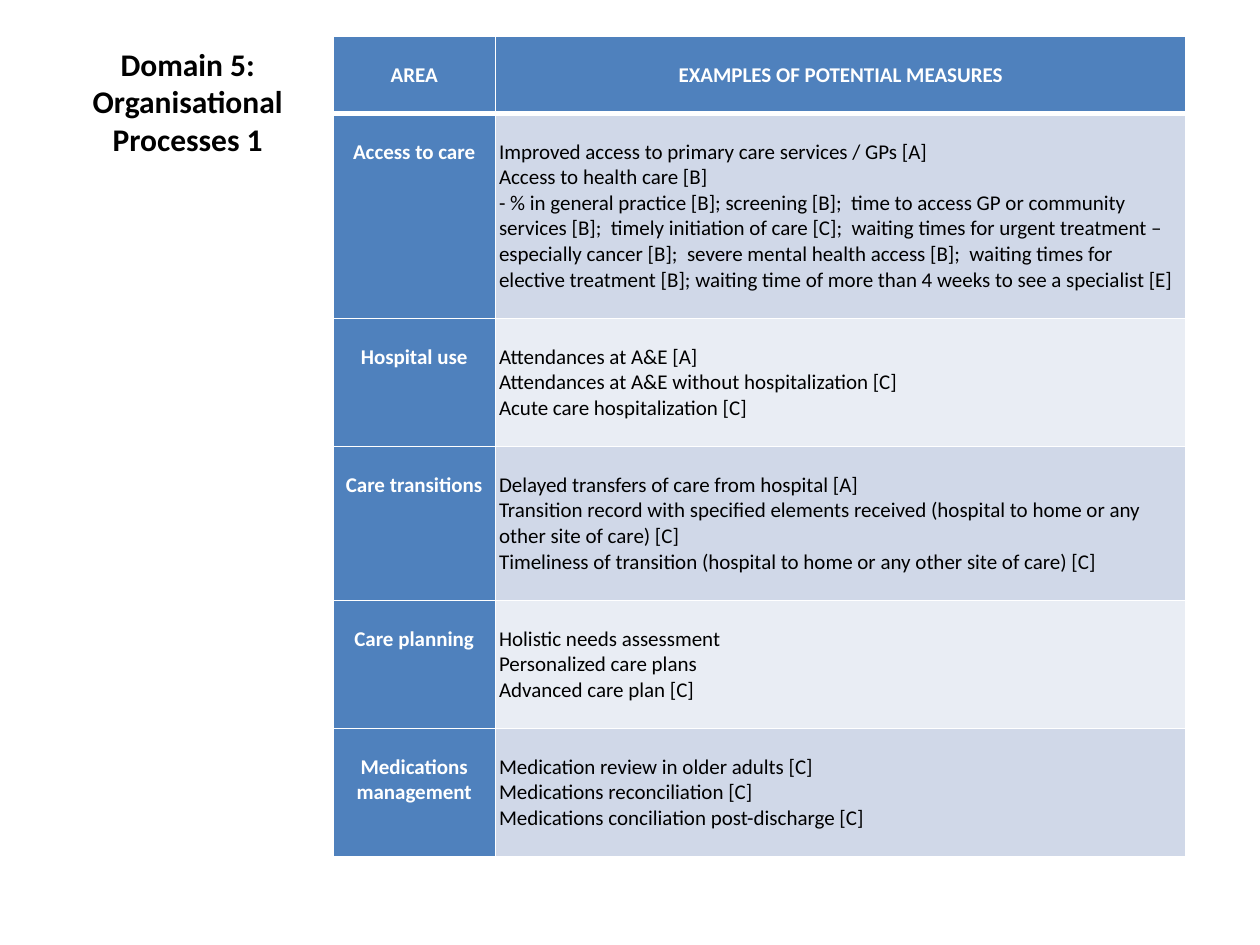
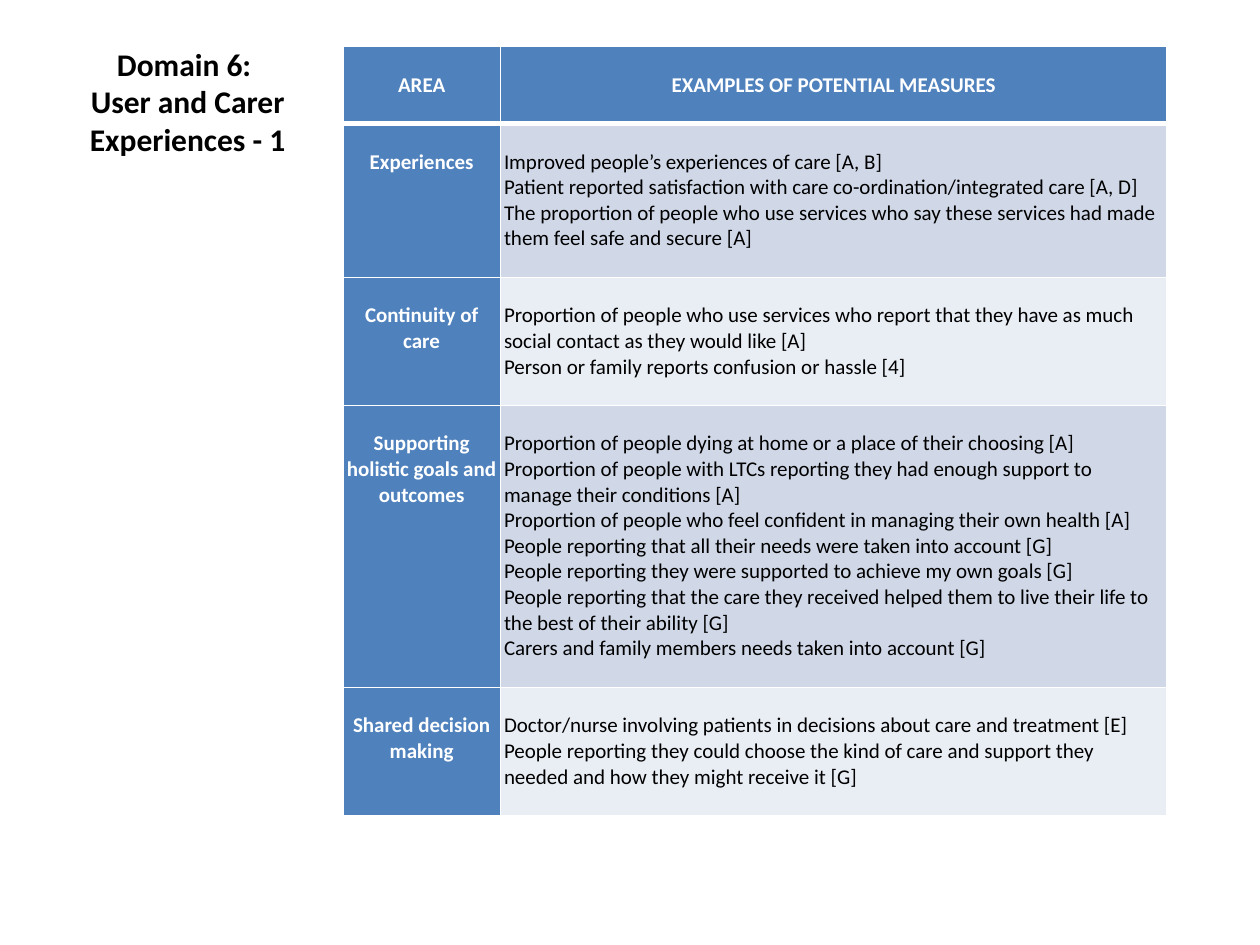
import pptx
import pptx.util
import pptx.dml.color
import pptx.enum.text
import pptx.oxml.ns
import lxml.etree
from dataclasses import dataclass
from pptx.util import Cm


@dataclass(frozen=True)
class Theme:
    font: str = "Calibri"
    title_size: int = 18
    table_size: int = 12
    ink: str = "000000"
    paper: str = "FFFFFF"
    accent: str = "4F81BD"
    bands: tuple = ("D0D8E8", "E9EDF4")
    thin: int = 1
    thick: int = 3


THEME = Theme()
HEADINGS = ("AREA", "EXAMPLES OF POTENTIAL MEASURES")

SLIDES = [
    {
        "title": "Domain 5: Organisational Processes 1",
        "corner": (6.71, 0.74),
        "columns": (3.28, 13.92),
        "rows": [
            ("Access to care", 6, [
                "Improved access to primary care services / GPs [A]",
                "Access to health care [B]",
                "- % in general practice [B]; screening [B];  time to access GP or "
                "community services [B];  timely initiation of care [C];  waiting "
                "times for urgent treatment – especially cancer [B];  severe mental "
                "health access [B];  waiting times for elective treatment [B]; "
                "waiting time of more than 4 weeks to see a specialist [E]",
            ]),
            ("Hospital use", 3, [
                "Attendances at A&E [A]",
                "Attendances at A&E without hospitalization [C]",
                "Acute care hospitalization [C]",
            ]),
            ("Care transitions", 4, [
                "Delayed transfers of care from hospital [A]",
                "Transition record with specified elements received (hospital to "
                "home or any other site of care) [C]",
                "Timeliness of transition (hospital to home or any other site of care) [C]",
            ]),
            ("Care planning", 3, [
                "Holistic needs assessment",
                "Personalized care plans",
                "Advanced care plan [C]",
            ]),
            ("Medications management", 3, [
                "Medication review in older adults [C]",
                "Medications reconciliation [C]",
                "Medications conciliation post-discharge [C]",
            ]),
        ],
    },
    {
        "title": "Domain 6: \vUser and Carer Experiences - 1",
        "corner": (6.91, 0.94),
        "columns": (3.18, 13.44),
        "rows": [
            ("Experiences", 4, [
                "Improved people’s experiences of care [A, B]",
                "Patient reported satisfaction with care co-ordination/integrated care [A, D]",
                "The proportion of people who use services who say these services "
                "had made them feel safe and secure [A]",
            ]),
            ("Continuity of care", 3, [
                "Proportion of people who use services who report that they have "
                "as much social contact as they would like [A]",
                "Person or family reports confusion or hassle [4]",
            ]),
            ("Supporting holistic goals and outcomes", 9, [
                "Proportion of people dying at home or a place of their choosing [A]",
                "Proportion of people with LTCs reporting they had enough support "
                "to manage their conditions [A]",
                "Proportion of people who feel confident in managing their own health [A]",
                "People reporting that all their needs were taken into account [G]",
                "People reporting they were supported to achieve my own goals [G]",
                "People reporting that the care they received helped them to live "
                "their life to the best of their ability [G]",
                "Carers and family members needs taken into account [G]",
            ]),
            ("Shared decision making", 3, [
                "Doctor/nurse involving patients in decisions about care and treatment [E]",
                "People reporting they could choose the kind of care and support "
                "they needed and how they might receive it [G]",
            ]),
        ],
    },
]

TITLE_BOX = (1.27, 0.76, 5.03, 2.57)
LINE_HEIGHT = Cm(15.5) // 30
SIDE_INSET = Cm(0.07)


def write(frame, text, size, color, bold, centred):
    frame.text = text
    for para in frame.paragraphs:
        para.alignment = (pptx.enum.text.PP_ALIGN.CENTER if centred
                          else pptx.enum.text.PP_ALIGN.LEFT)
        for span in para.runs:
            span.font.name = THEME.font
            span.font.size = pptx.util.Pt(size)
            span.font.bold = bold
            span.font.color.rgb = pptx.dml.color.RGBColor.from_string(color)


def add_title(page, text):
    box = page.shapes.add_textbox(*map(Cm, TITLE_BOX))
    frame = box.text_frame
    frame.word_wrap = True
    frame.vertical_anchor = pptx.enum.text.MSO_ANCHOR.MIDDLE
    write(frame, text, THEME.title_size, THEME.ink, True, True)


def set_borders(cell, top, bottom):
    properties = cell._tc.get_or_add_tcPr()
    qn = pptx.oxml.ns.qn
    widths = {"a:lnL": THEME.thin, "a:lnR": THEME.thin, "a:lnT": top, "a:lnB": bottom}
    for place, (tag, width) in enumerate(widths.items()):
        line = lxml.etree.Element(qn(tag), w=str(pptx.util.Pt(width)))
        fill = lxml.etree.SubElement(line, qn("a:solidFill"))
        lxml.etree.SubElement(fill, qn("a:srgbClr"), val=THEME.paper)
        properties.insert(place, line)


def fill_cell(cell, text, row, column):
    header = row == 0
    label = header or column == 0
    cell.margin_left = cell.margin_right = SIDE_INSET
    cell.margin_top = cell.margin_bottom = LINE_HEIGHT
    cell.fill.solid()
    background = THEME.accent if label else THEME.bands[(row - 1) % 2]
    cell.fill.fore_color.rgb = pptx.dml.color.RGBColor.from_string(background)
    color = THEME.paper if label else THEME.ink
    write(cell.text_frame, text, THEME.table_size, color, label, label)
    set_borders(cell, THEME.thick if row == 1 else THEME.thin,
                THEME.thick if header else THEME.thin)


def add_measures(page, corner, columns, rows):
    heights = [LINE_HEIGHT * (lines + 2) for lines in [1] + [row[1] for row in rows]]
    widths = [Cm(width) for width in columns]
    left, top = map(Cm, corner)
    table = page.shapes.add_table(len(heights), len(widths), left, top,
                                  sum(widths), sum(heights)).table
    for column, width in zip(table.columns, widths):
        column.width = width
    for row, height in zip(table.rows, heights):
        row.height = height
    texts = [HEADINGS] + [(area, "\n".join(measures)) for area, _, measures in rows]
    for row, pair in enumerate(texts):
        for column, text in enumerate(pair):
            fill_cell(table.cell(row, column), text, row, column)


def main():
    deck = pptx.Presentation()
    deck.slide_width, deck.slide_height = Cm(25.4), Cm(19.05)
    for content in SLIDES:
        page = deck.slides.add_slide(deck.slide_layouts[6])
        add_title(page, content["title"])
        add_measures(page, content["corner"], content["columns"], content["rows"])
    deck.save("out.pptx")


if __name__ == "__main__":
    main()
